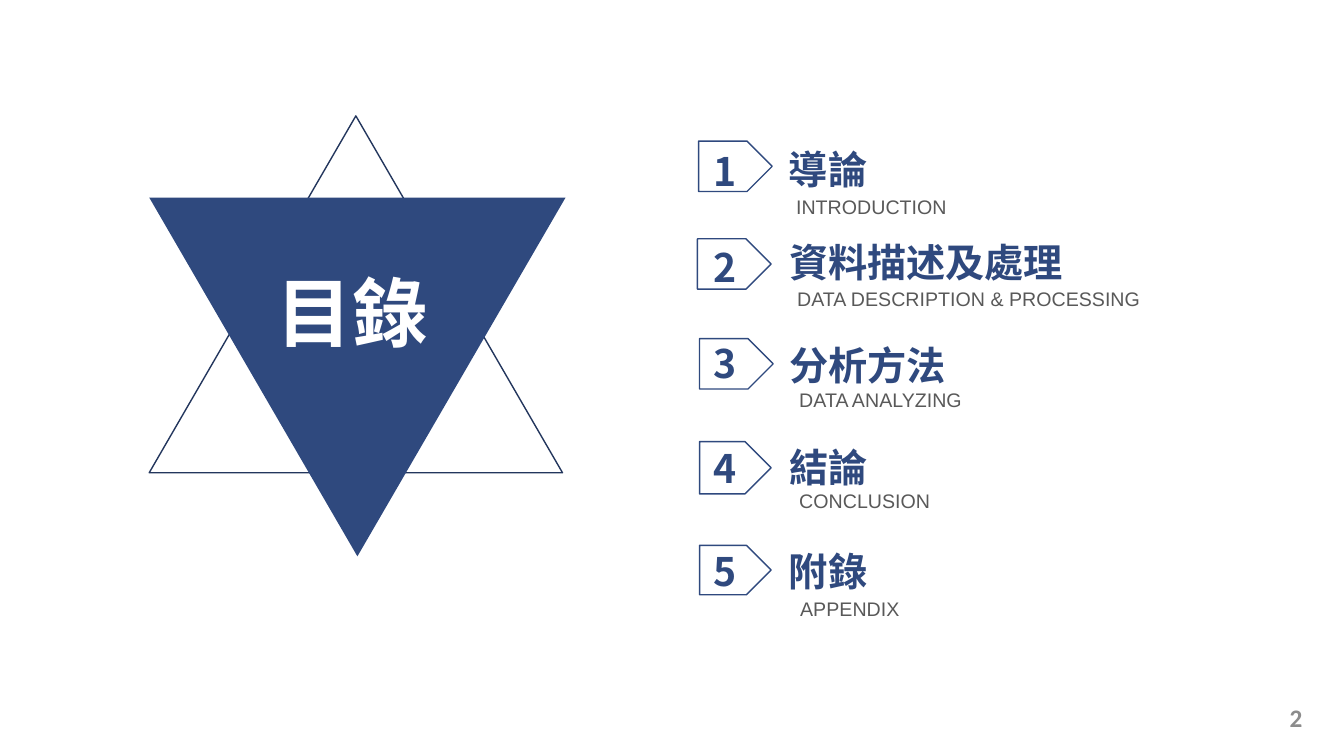
from dataclasses import dataclass

from lxml import etree
from pptx import Presentation
from pptx.dml.color import RGBColor
from pptx.enum.shapes import MSO_SHAPE
from pptx.enum.text import MSO_ANCHOR, MSO_AUTO_SIZE, PP_ALIGN
from pptx.oxml.ns import qn
from pptx.shapes.autoshape import Shape
from pptx.slide import Slide
from pptx.util import Pt

TRIANGLE = MSO_SHAPE.ISOSCELES_TRIANGLE
ARROW_TAG = MSO_SHAPE.PENTAGON
TOP, MIDDLE = MSO_ANCHOR.TOP, MSO_ANCHOR.MIDDLE
LEFT, RIGHT = PP_ALIGN.LEFT, PP_ALIGN.RIGHT
FIT_SHAPE, NO_FIT = MSO_AUTO_SIZE.SHAPE_TO_FIT_TEXT, MSO_AUTO_SIZE.NONE

CJK_FONT = "Noto Sans CJK SC"
NAVY, DARK_NAVY, WHITE = "2F497E", "23365D", "FFFFFF"
GRAY, LIGHT_GRAY = "595959", "8C8C8C"

HEADING_LEFT = 556.5
NUMBER_LEFT = 502.9
LABEL_HEIGHT = 40.3


@dataclass(frozen=True)
class Box:
    left: float
    top: float
    width: float
    height: float


@dataclass(frozen=True)
class Entry:
    heading: str
    heading_top: float
    heading_width: float
    caption: str
    caption_left: float
    caption_top: float
    caption_width: float
    tag: Box
    number_top: float


ENTRIES = [
    Entry("導論", 100.8, 172.8, "INTRODUCTION", 561.6, 127.4, 172.8,
          Box(499, 100.8, 52.6, 36), 101.5),
    Entry("資料描述及處理", 167, 234, "DATA DESCRIPTION & PROCESSING", 562.3, 193, 291,
          Box(498.2, 170.6, 52.6, 36), 169.9),
    Entry("分析方法", 240.3, 166.3, "DATA ANALYZING", 563.8, 265, 247,
          Box(499.7, 241.9, 52.6, 36), 239),
    Entry("結論", 313.2, 162, "CONCLUSION", 563.8, 337.7, 247,
          Box(499.7, 315.4, 51.1, 37.4), 313.9),
    Entry("附錄", 387.4, 180, "APPENDIX", 564.5, 414.7, 194.4,
          Box(499.7, 389.5, 51.1, 35.3), 387.4),
]


def color(value: str) -> RGBColor:
    return RGBColor.from_string(value)


def add_figure(page: Slide, kind: MSO_SHAPE, box: Box, *, fill: str = "",
               line: str = "", rotation: float = 0) -> Shape:
    figure = page.shapes.add_shape(
        kind, Pt(box.left), Pt(box.top), Pt(box.width), Pt(box.height))
    figure.shadow.inherit = False
    figure.rotation = rotation
    if fill:
        figure.fill.solid()
        figure.fill.fore_color.rgb = color(fill)
    else:
        figure.fill.background()
    if line:
        figure.line.color.rgb = color(line)
        figure.line.width = Pt(1)
    else:
        figure.line.fill.background()
    return figure


def add_text(page: Slide, text: str, box: Box, *, size: float, ink: str = NAVY,
             font: str = CJK_FONT, bold: bool = True, anchor: MSO_ANCHOR = MIDDLE,
             align: PP_ALIGN = LEFT, grow: bool = False) -> Shape:
    label = page.shapes.add_textbox(
        Pt(box.left), Pt(box.top), Pt(box.width), Pt(box.height))
    frame = label.text_frame
    frame.word_wrap = True
    frame.auto_size = FIT_SHAPE if grow else NO_FIT
    frame.vertical_anchor = anchor
    para = frame.paragraphs[0]
    para.alignment = align
    span = para.add_run()
    span.text = text
    span.font.size = Pt(size)
    span.font.bold = bold
    span.font.name = font
    span.font.color.rgb = color(ink)
    east_asian = etree.SubElement(span.font._element, qn("a:ea"))
    east_asian.set("typeface", font)
    return label


def add_entry(page: Slide, number: int, entry: Entry) -> None:
    add_text(page, entry.heading,
             Box(HEADING_LEFT, entry.heading_top, entry.heading_width, LABEL_HEIGHT),
             size=28)
    add_text(page, entry.caption,
             Box(entry.caption_left, entry.caption_top, entry.caption_width, LABEL_HEIGHT),
             size=14, ink=GRAY, font="Arial", bold=False)
    add_figure(page, ARROW_TAG, entry.tag, line=NAVY)
    add_text(page, str(number), Box(NUMBER_LEFT, entry.number_top, 37.4, 41),
             size=28, anchor=TOP, grow=True)


def main() -> None:
    deck = Presentation()
    deck.slide_width, deck.slide_height = Pt(960), Pt(540)
    page = deck.slides.add_slide(deck.slide_layouts[6])

    add_figure(page, TRIANGLE, Box(106.6, 82.8, 295.2, 254.9), line=DARK_NAVY)
    add_figure(page, TRIANGLE, Box(106.6, 141.1, 297.4, 256.3), fill=NAVY, rotation=180)
    add_text(page, "目錄", Box(190.8, 186.5, 172.8, 72.7),
             size=54, ink=WHITE, anchor=TOP, grow=True)

    for number, entry in enumerate(ENTRIES, start=1):
        add_entry(page, number, entry)

    add_text(page, "2", Box(721.4, 498.2, 216, 28.8),
             size=18, ink=LIGHT_GRAY, font="Calibri", align=RIGHT)
    deck.save("out.pptx")


if __name__ == "__main__":
    main()
